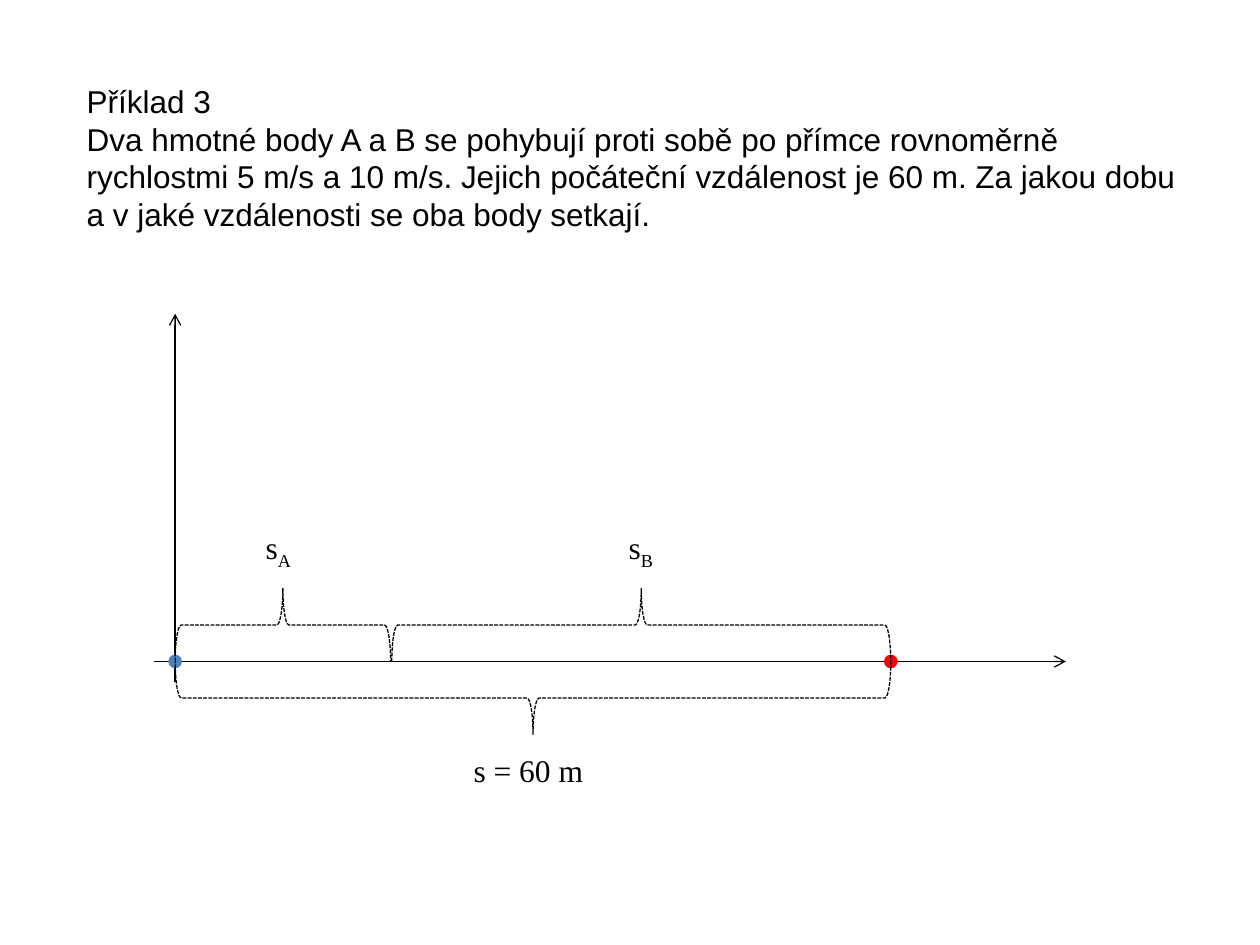
from lxml.etree import SubElement
from pptx import Presentation
from pptx.dml.color import RGBColor
from pptx.enum.dml import MSO_LINE
from pptx.enum.shapes import MSO_CONNECTOR, MSO_SHAPE
from pptx.enum.text import MSO_AUTO_SIZE
from pptx.oxml.ns import qn
from pptx.util import Inches, Pt

BLACK = RGBColor(0x00, 0x00, 0x00)
BLUE = RGBColor(0x4F, 0x81, 0xBD)
RED = RGBColor(0xFF, 0x00, 0x00)

AXIS_Y = 5.25
POINT_A_X = 1.39
MEETING_X = 3.1
POINT_B_X = 7.07
BRACE_DEPTH = 0.58
POINT_SIZE = 0.08

PROBLEM = (
    "Příklad 3",
    "Dva hmotné body A a B se pohybují proti sobě po přímce rovnoměrně "
    "rychlostmi 5 m/s a 10 m/s. Jejich počáteční vzdálenost je 60 m. "
    "Za jakou dobu a v jaké vzdálenosti se oba body setkají.",
)


def add_axis(slide, start, end):
    axis = slide.shapes.add_connector(
        MSO_CONNECTOR.STRAIGHT, *(Inches(value) for value in start + end))
    axis.line.color.rgb = BLACK
    axis.line.width = Pt(0.75)
    SubElement(axis.line._get_or_add_ln(), qn("a:tailEnd"), type="arrow")
    SubElement(axis._element.spPr, qn("a:effectLst"))


def add_point(slide, center_x, color):
    point = slide.shapes.add_shape(
        MSO_SHAPE.OVAL, Inches(center_x - POINT_SIZE / 2),
        Inches(AXIS_Y - POINT_SIZE / 2), Inches(POINT_SIZE), Inches(POINT_SIZE))
    point.shadow.inherit = False
    point.fill.solid()
    point.fill.fore_color.rgb = color
    point.line.color.rgb = color
    point.line.width = Pt(2)


def add_brace(slide, start_x, end_x, above):
    """Turn an upright brace so that it spans a stretch of the axis."""
    length = end_x - start_x
    center_x = (start_x + end_x) / 2
    center_y = AXIS_Y + (-BRACE_DEPTH if above else BRACE_DEPTH) / 2
    brace = slide.shapes.add_shape(
        MSO_SHAPE.RIGHT_BRACE, Inches(center_x - BRACE_DEPTH / 2),
        Inches(center_y - length / 2), Inches(BRACE_DEPTH), Inches(length))
    brace.rotation = 270 if above else 90
    brace.shadow.inherit = False
    brace.fill.background()
    brace.line.color.rgb = BLACK
    brace.line.width = Pt(0.75)
    brace.line.dash_style = MSO_LINE.SQUARE_DOT


def add_text(slide, left, top, width, height, paragraphs, font_name, subscript=""):
    """Add a text box, with an optional subscript after its last paragraph."""
    box = slide.shapes.add_textbox(
        Inches(left), Inches(top), Inches(width), Inches(height))
    frame = box.text_frame
    frame.word_wrap = True
    frame.auto_size = MSO_AUTO_SIZE.SHAPE_TO_FIT_TEXT
    frame.text = "\n".join(paragraphs)
    if subscript:
        run = frame.paragraphs[-1].add_run()
        run.text = subscript
        run.font._element.set("baseline", "-25000")
    for paragraph in frame.paragraphs:
        for run in paragraph.runs:
            run.font.name = font_name
            run.font.size = Pt(18)
            run.font.color.rgb = BLACK


def main():
    presentation = Presentation()
    presentation.slide_width = Inches(10)
    presentation.slide_height = Inches(7.5)
    slide = presentation.slides.add_slide(presentation.slide_layouts[6])

    add_axis(slide, (POINT_A_X, 5.41), (POINT_A_X, 2.49))
    add_text(slide, 0.59, 0.6, 8.9, 1.31, PROBLEM, "Arial")
    add_axis(slide, (1.22, AXIS_Y), (8.46, AXIS_Y))
    add_point(slide, POINT_A_X, BLUE)
    add_point(slide, POINT_B_X, RED)

    add_brace(slide, POINT_A_X, POINT_B_X, above=False)
    add_brace(slide, MEETING_X + 0.01, POINT_B_X, above=True)
    add_brace(slide, POINT_A_X, MEETING_X, above=True)

    add_text(slide, 3.66, 5.91, 1.18, 0.4, ["s = 60 m"], "Times New Roman")
    for left, subscript in ((4.89, "B"), (2.01, "A")):
        add_text(slide, left, 4.14, 1.29, 0.4, ["s"], "Times New Roman", subscript)

    presentation.save("out.pptx")


if __name__ == "__main__":
    main()
